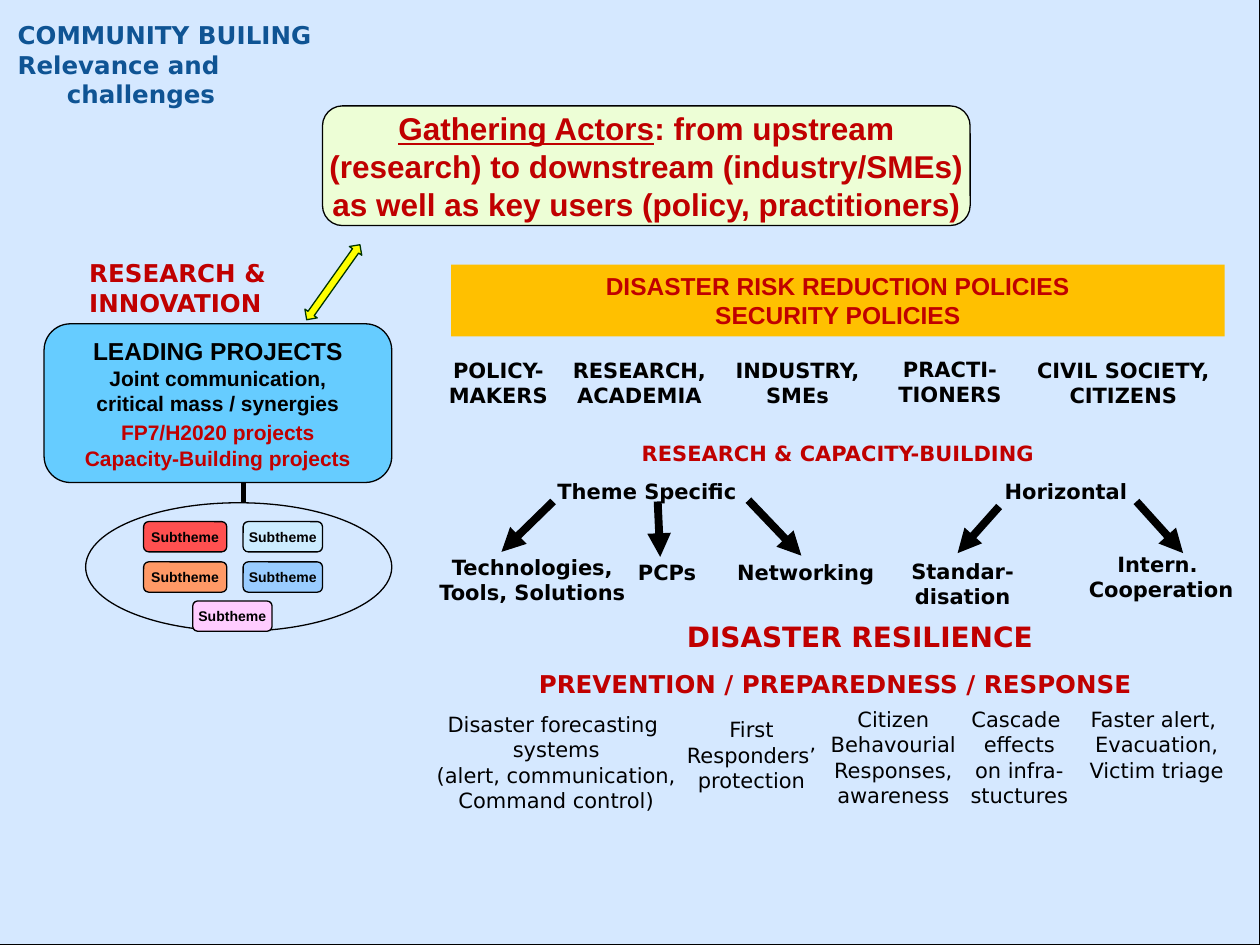
import copy
from pptx import Presentation, util as u
from pptx.dml.color import RGBColor
from pptx.enum import shapes, text
from pptx.oxml.ns import qn
from lxml import etree

PX = 9144  # one px is a hundredth of an inch


class Theme:
    sans, wide = "Arial", "DejaVu Sans"
    black, red, navy = "000000", "C00000", "0F5494"
    sky, lime, blue, amber = "D5E8FF", "EDFED6", "66CCFF", "FFC000"
    yellow, green = "FFFF00", "003300"
    tiny, body, head, big, banner = 8, 12, 14, 16, 18


T = Theme
KIND = shapes.MSO_SHAPE


def write(sp, paras, size=T.body, font=T.wide, color=T.black, bold=True,
          align=text.PP_ALIGN.CENTER, anchor=text.MSO_ANCHOR.TOP,
          wrap=False, grow=False, gap=0):
    """Fill a shape; a paragraph is a string or a list of (text, overrides), \\v breaks a line."""
    tf = sp.text_frame
    tf.word_wrap, tf.vertical_anchor = wrap, anchor
    fit = text.MSO_AUTO_SIZE
    tf.auto_size = fit.SHAPE_TO_FIT_TEXT if grow else fit.NONE
    for i, runs in enumerate(paras):
        p = tf.add_paragraph() if i else tf.paragraphs[0]
        p.alignment = align
        p.space_before = u.Pt(gap if i else 0)
        for words, over in [(runs, {})] if isinstance(runs, str) else runs:
            for j, line in enumerate(words.split("\v")):
                if j:
                    p.add_line_break()
                    p._p[-1].append(copy.deepcopy(r._r.rPr))
                r = p.add_run()
                r.text = line
                r.font.name, r.font.bold = font, bold
                r.font.size = u.Pt(over.get("size", size))
                r.font.color.rgb = RGBColor.from_string(over.get("color", color))
                if over.get("underline"):
                    r.font.underline = True


def draw(kind, box, fill=None, line=T.black):
    sp = s.shapes.add_shape(kind, *(v * PX for v in box))
    sp.shadow.inherit = False
    if fill:
        sp.fill.solid()
        sp.fill.fore_color.rgb = RGBColor.from_string(fill)
    else:
        sp.fill.background()
    if line:
        sp.line.color.rgb = RGBColor.from_string(line)
        sp.line.width = u.Pt(0.75)
    else:
        sp.line.fill.background()
    return sp


prs = Presentation()
prs.slide_width, prs.slide_height = 1000 * PX, 750 * PX
s = prs.slides.add_slide(prs.slide_layouts[5])

# Backdrop, placed behind the title
backdrop = draw(KIND.RECTANGLE, (-6, -3, 1006, 753), T.sky)
s.shapes._spTree.insert(2, backdrop._element)

# Title with hanging indent
title = s.shapes.title
title.left, title.top, title.width, title.height = (v * PX for v in (4, 11, 299, 96))
write(title, ["COMMUNITY BUILING", "Relevance and challenges"], size=T.head,
      color=T.navy, align=text.PP_ALIGN.LEFT, wrap=True)
for p in title.text_frame.paragraphs:
    pPr = p._p.get_or_add_pPr()
    pPr.set("marL", str(39 * PX))
    pPr.set("indent", str(-39 * PX))

# Gathering actors banner
middle = text.MSO_ANCHOR.MIDDLE
sp = draw(KIND.ROUNDED_RECTANGLE, (256, 84, 514, 95), T.lime)
write(sp, [[("Gathering Actors", {"underline": True}),
            (": from upstream\v(research) to downstream (industry/SMEs)"
             "\vas well as key users (policy, practitioners)", {})]],
      size=T.banner, font=T.sans, color=T.red, anchor=middle)

# Leading projects and the double arrow to the banner
sp = draw(KIND.ROUNDED_RECTANGLE, (35, 257, 276, 126), T.blue)
write(sp, [[("LEADING PROJECTS\v", {"size": T.head}),
            ("Joint communication,\vcritical mass / synergies", {})],
           [("FP7/H2020 projects\vCapacity-Building projects", {"color": T.red})]],
      font=T.sans, anchor=middle, gap=2.4)
arrow = draw(KIND.LEFT_RIGHT_ARROW, (228, 218, 73, 12), T.yellow, T.green)
arrow.rotation = 125.4

# Subthemes inside the ellipse
draw(KIND.OVAL, (68, 399, 243, 102))
for x, y, w, fill in [(114, 414, 66, "FF5050"), (193, 414, 63, "CCECFF"),
                      (114, 446, 66, "FF9966"), (193, 446, 63, "99CCFF"),
                      (153, 477, 63, "FFCCFF")]:
    sp = draw(KIND.ROUNDED_RECTANGLE, (x, y, w, 24), fill)
    write(sp, ["Subtheme"], size=T.tiny, font=T.sans, anchor=middle)

# Policies bar
sp = draw(KIND.RECTANGLE, (358, 210, 614, 57), T.amber, None)
write(sp, ["DISASTER RISK REDUCTION POLICIES", "SECURITY POLICIES"],
      size=T.head, font=T.sans, color=T.red, wrap=True, grow=True)

# Links: stem of the ellipse, then arrows from the two branches
for x1, y1, x2, y2, width, pointed in [
        (193, 383, 193, 399, 3, False),
        (439, 398, 398, 438, 4.5, True),
        (522, 398, 524, 442, 4.5, True),
        (594, 397, 636, 441, 4.5, True),
        (793, 402, 760, 439, 4.5, True),
        (902, 398, 939, 439, 4.5, True)]:
    link = s.shapes.add_connector(shapes.MSO_CONNECTOR.STRAIGHT,
                                  *(v * PX for v in (x1, y1, x2, y2)))
    link.line.color.rgb = RGBColor.from_string(T.black)
    link.line.width = u.Pt(width)
    if pointed:
        etree.SubElement(link.line._get_or_add_ln(), qn("a:tailEnd"), type="triangle")
    etree.SubElement(link._element.spPr, qn("a:effectLst"))

# Labels: box, paragraphs, format
heading = {"color": T.red}
plain = {"bold": False}
labels = [
    ((61, 200, 169, 57), ["RESEARCH &", "INNOVATION"],
     {"size": T.head, "color": T.red, "align": text.PP_ALIGN.LEFT}),
    # Actors
    ((346, 279, 99, 51), ["POLICY-\vMAKERS"], {}),
    ((444, 279, 127, 51), ["RESEARCH,\vACADEMIA"], {}),
    ((570, 279, 126, 51), ["INDUSTRY,\vSMEs"], {}),
    ((701, 278, 106, 50), ["PRACTI-", "TIONERS"], {}),
    ((807, 279, 169, 51), ["CIVIL SOCIETY,", "CITIZENS"], {}),
    # Research and capacity-building tree
    ((491, 345, 348, 30), ["RESEARCH & CAPACITY-BUILDING"], heading),
    ((432, 375, 163, 30), ["Theme Specific"], {}),
    ((787, 375, 118, 30), ["Horizontal"], {}),
    ((337, 435, 171, 51), ["Technologies,", "Tools, Solutions"], {}),
    ((496, 439, 67, 30), ["PCPs"], {}),
    ((574, 439, 131, 30), ["Networking"], {}),
    ((713, 438, 102, 50), ["Standar-", "disation"], {}),
    ((854, 433, 135, 50), ["Intern. ", "Cooperation"], {}),
    # Disaster resilience
    ((528, 487, 309, 37), ["DISASTER RESILIENCE"], {**heading, "size": T.big}),
    ((406, 526, 514, 34), ["PREVENTION / PREPAREDNESS / RESPONSE"],
     {**heading, "size": T.head}),
    ((335, 560, 213, 91), ["Disaster forecasting ", "systems",
                           "(alert, communication,", "Command control)"], plain),
    ((535, 564, 123, 71), ["First", "Responders’", "protection"], plain),
    ((649, 556, 120, 91), ["Citizen", "Behavourial", "Responses,", "awareness"], plain),
    ((760, 556, 98, 91), ["Cascade ", "effects", "on infra-", "stuctures"], plain),
    ((854, 556, 128, 71), ["Faster alert, ", "Evacuation,", "Victim triage"], plain),
]
for box, paras, style in labels:
    write(s.shapes.add_textbox(*(v * PX for v in box)), paras, grow=True, **style)

prs.save("out.pptx")
